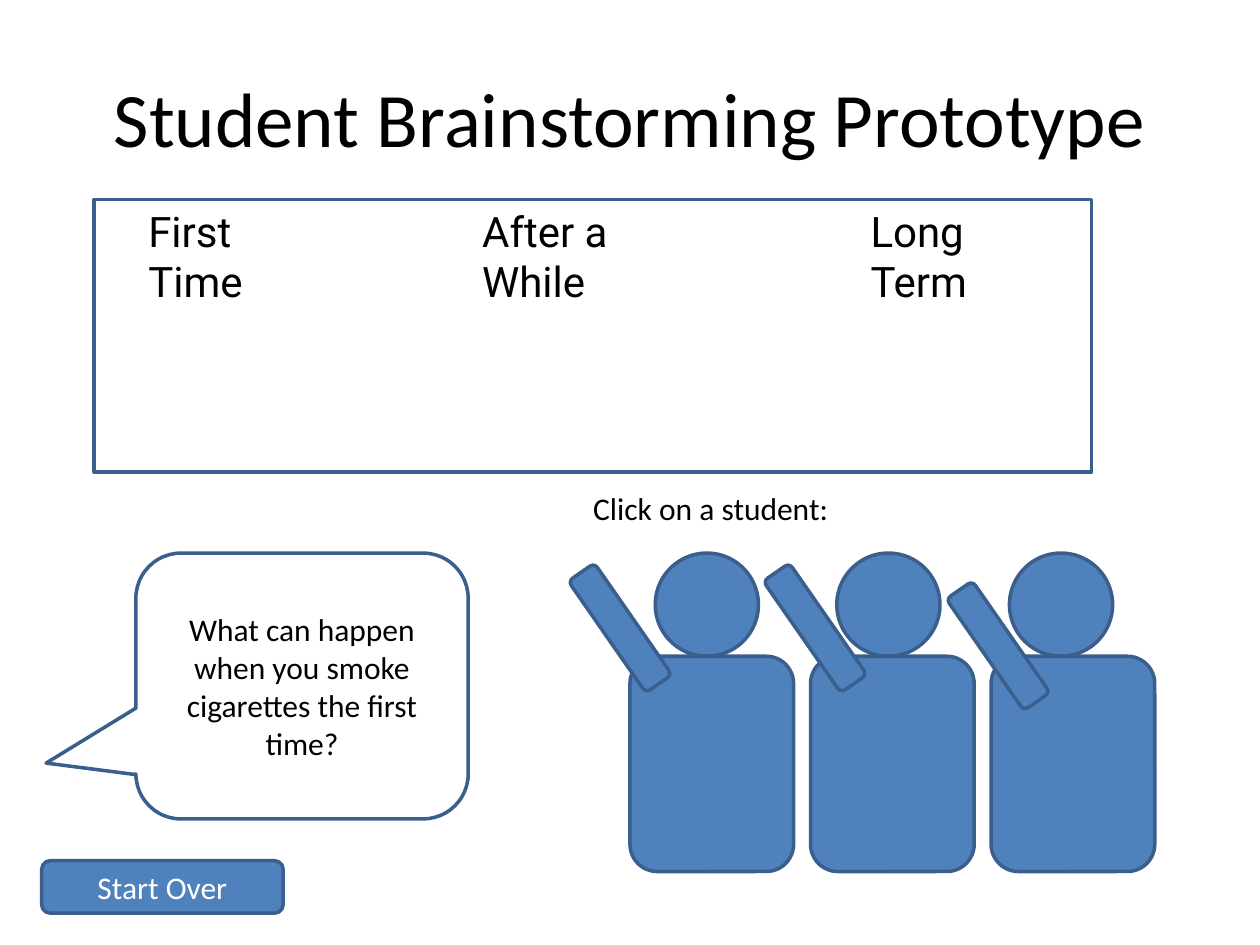
from pptx import Presentation
from pptx.dml.color import RGBColor
from pptx.enum.shapes import MSO_SHAPE
from pptx.enum.text import MSO_ANCHOR, PP_ALIGN
from pptx.util import Cm, Pt

RECT, ROUND = MSO_SHAPE.RECTANGLE, MSO_SHAPE.ROUNDED_RECTANGLE
OVAL, CALLOUT = MSO_SHAPE.OVAL, MSO_SHAPE.ROUNDED_RECTANGULAR_CALLOUT
MIDDLE, LEFT, CENTER = MSO_ANCHOR.MIDDLE, PP_ALIGN.LEFT, PP_ALIGN.CENTER

BLUE, EDGE, WHITE, BLACK = "4F81BD", "3A5F8C", "FFFFFF", "000000"

TITLE = "Student Brainstorming Prototype"
QUESTION = "What can happen when you smoke cigarettes the first time?"
PROMPT = "Click on a student:"
BUTTON = "Start Over"
COLUMNS = [("First Time", 2.74, 3.61), ("After a While", 9.47, 4.5), ("Long Term", 17.3, 3.66)]
STUDENTS = [
    {"head": 13.21, "arm": (11.13, 12.34)},
    {"head": 16.87, "arm": (15.06, 12.34)},
    {"head": 20.35, "arm": (18.75, 12.7)},
]
BODY_LEFT, BODY_STEP, BODY_TOP = 12.7, 3.64, 13.23
BODY_W, BODY_H, HEAD = 3.3, 4.34, 2.08
ARM_W, ARM_H, ARM_ANGLE = 2.74, 0.64, 55.2


def color(value):
    """Turn a hex string into a colour."""
    return RGBColor.from_string(value)


def write(shape, text, size, ink=BLACK, font="Calibri", align=CENTER):
    """Put one formatted paragraph into a shape."""
    tf = shape.text_frame
    tf.word_wrap = True
    tf.text = text
    p = tf.paragraphs[0]
    p.alignment = align
    f = p.runs[0].font
    f.name, f.size = font, Pt(size)
    f.color.rgb = color(ink)


def place(shape, x, y, w, h):
    """Move and size a shape in centimetres."""
    shape.left, shape.top, shape.width, shape.height = Cm(x), Cm(y), Cm(w), Cm(h)


def add_box(s, kind, x, y, w, h, fill=BLUE):
    """Add a filled, outlined preset shape."""
    sp = s.shapes.add_shape(kind, Cm(x), Cm(y), Cm(w), Cm(h))
    sp.shadow.inherit = False
    sp.fill.solid()
    sp.fill.fore_color.rgb = color(fill)
    sp.line.color.rgb = color(EDGE)
    sp.line.width = Pt(2)
    sp.text_frame.vertical_anchor = MIDDLE
    return sp


def add_label(s, text, x, y, w, h, size, font="Calibri"):
    """Add a left-aligned text box."""
    box = s.shapes.add_textbox(Cm(x), Cm(y), Cm(w), Cm(h))
    write(box, text, size, font=font, align=LEFT)


def add_students(s):
    """Draw the heads and bodies, then the raised arms in front."""
    for i, student in enumerate(STUDENTS):
        add_box(s, OVAL, student["head"], BODY_TOP - HEAD, HEAD, HEAD)
        add_box(s, ROUND, BODY_LEFT + i * BODY_STEP, BODY_TOP, BODY_W, BODY_H)
    for student in STUDENTS:
        arm = add_box(s, ROUND, *student["arm"], ARM_W, ARM_H)
        arm.rotation = ARM_ANGLE


def main():
    """Build the slide and save it."""
    prs = Presentation()
    prs.slide_width, prs.slide_height = Cm(25.4), Cm(19.05)
    s = prs.slides.add_slide(prs.slide_layouts[5])
    title = s.shapes.title
    place(title, 1.27, 0.76, 22.86, 3.18)
    title.text_frame.vertical_anchor = MIDDLE
    write(title, TITLE, 44)

    add_box(s, RECT, 1.9, 4.02, 20.11, 5.5, WHITE)
    for text, x, w in COLUMNS:
        add_label(s, text, x, 4.02, w, 1.27, 24, "Roboto")
    write(add_box(s, ROUND, 0.84, 17.35, 4.87, 1.06), BUTTON, 18, WHITE)

    add_students(s)
    callout = add_box(s, CALLOUT, 2.74, 11.15, 6.7, 5.36, WHITE)
    for i, value in enumerate((-0.77, 0.29, 0.17)):
        callout.adjustments[i] = value
    write(callout, QUESTION, 18)
    add_label(s, PROMPT, 11.71, 9.73, 5.4, 1.02, 18)
    prs.save("out.pptx")


if __name__ == "__main__":
    main()
